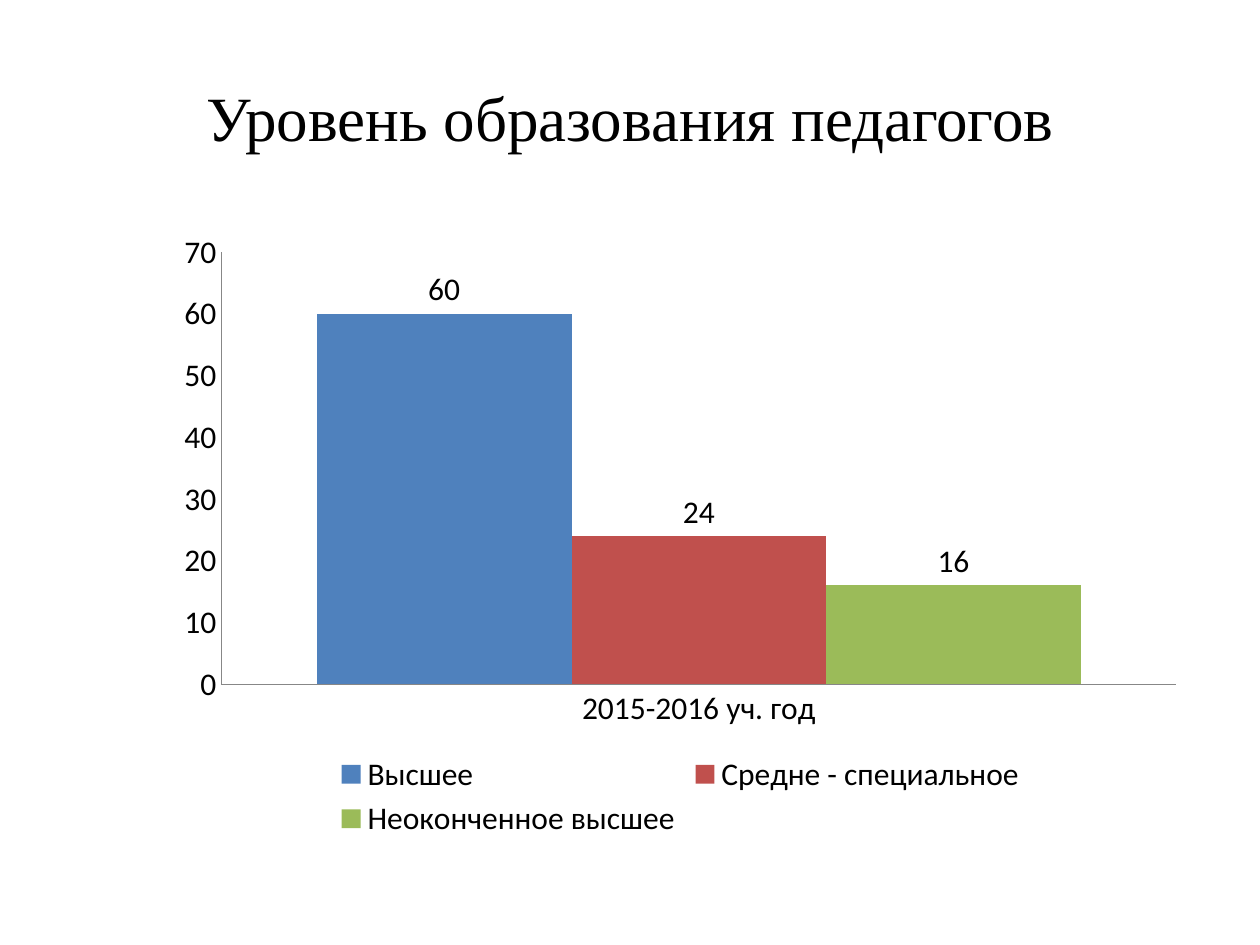
from pptx import Presentation
from pptx.chart.data import CategoryChartData
from pptx.dml.color import RGBColor
from pptx.enum.chart import XL_CHART_TYPE as ChartType
from pptx.enum.chart import XL_LABEL_POSITION as LabelPosition
from pptx.enum.chart import XL_LEGEND_POSITION as LegendPosition
from pptx.enum.chart import XL_TICK_MARK as TickMark
from pptx.enum.text import MSO_ANCHOR, PP_ALIGN
from pptx.util import Inches, Pt

COLORS = {
    "text": "000000",
    "axis": "878787",
    "higher": "4F81BD",
    "secondary": "C0504D",
    "unfinished": "9BBB59",
}
EDUCATION_LEVELS = [
    ("Высшее", 60, "higher"),
    ("Средне - специальное", 24, "secondary"),
    ("Неоконченное высшее", 16, "unfinished"),
]


class SlideBuilder:
    heading_font = "Times New Roman"
    chart_font = "Calibri"

    def __init__(self, deck):
        self.deck = deck
        self.slide = deck.slides.add_slide(deck.slide_layouts[5])

    def color(self, key):
        return RGBColor.from_string(COLORS[key])

    def box(self, left, top, width, height):
        across, down = self.deck.slide_width, self.deck.slide_height
        return (int(left * across), int(top * down),
                int(width * across), int(height * down))

    def style_font(self, font, name, size):
        font.name = name
        font.size = Pt(size)
        font.bold = False
        font.color.rgb = self.color("text")

    def title(self, text, *shares):
        heading = self.slide.shapes.title
        heading.left, heading.top, heading.width, heading.height = self.box(*shares)
        frame = heading.text_frame
        frame.text = text
        frame.vertical_anchor = MSO_ANCHOR.MIDDLE
        paragraph = frame.paragraphs[0]
        paragraph.alignment = PP_ALIGN.CENTER
        self.style_font(paragraph.runs[0].font, self.heading_font, 36)

    def column_chart(self, category, levels, *shares):
        data = CategoryChartData()
        data.categories = [category]
        for name, value, _ in levels:
            data.add_series(name, [value])
        chart = self.slide.shapes.add_chart(
            ChartType.COLUMN_CLUSTERED, *self.box(*shares), data).chart
        chart.has_title = False
        self.style_font(chart.font, self.chart_font, 18)

        for axis in (chart.category_axis, chart.value_axis):
            axis.has_major_gridlines = False
            axis.major_tick_mark = axis.minor_tick_mark = TickMark.NONE
            axis.format.line.color.rgb = self.color("axis")
            axis.format.line.width = Pt(0.75)
        chart.value_axis.minimum_scale = 0
        chart.value_axis.maximum_scale = 70
        chart.value_axis.major_unit = 10

        plot = chart.plots[0]
        plot.gap_width = 75
        plot.overlap = 0
        plot.vary_by_categories = False
        for series, (_, _, key) in zip(plot.series, levels):
            series.format.fill.solid()
            series.format.fill.fore_color.rgb = self.color(key)
            labels = series.data_labels
            labels.show_value = True
            labels.position = LabelPosition.OUTSIDE_END

        chart.has_legend = True
        chart.legend.position = LegendPosition.BOTTOM
        chart.legend.include_in_layout = False


def main():
    deck = Presentation()
    deck.slide_width, deck.slide_height = Inches(10), Inches(7.5)
    builder = SlideBuilder(deck)
    builder.title("Уровень образования педагогов", 0.05, 0.04, 0.9, 1 / 6)
    builder.column_chart("2015-2016 уч. год", EDUCATION_LEVELS,
                         0.13, 7 / 30, 0.82, 0.66)
    deck.save("out.pptx")


if __name__ == "__main__":
    main()
